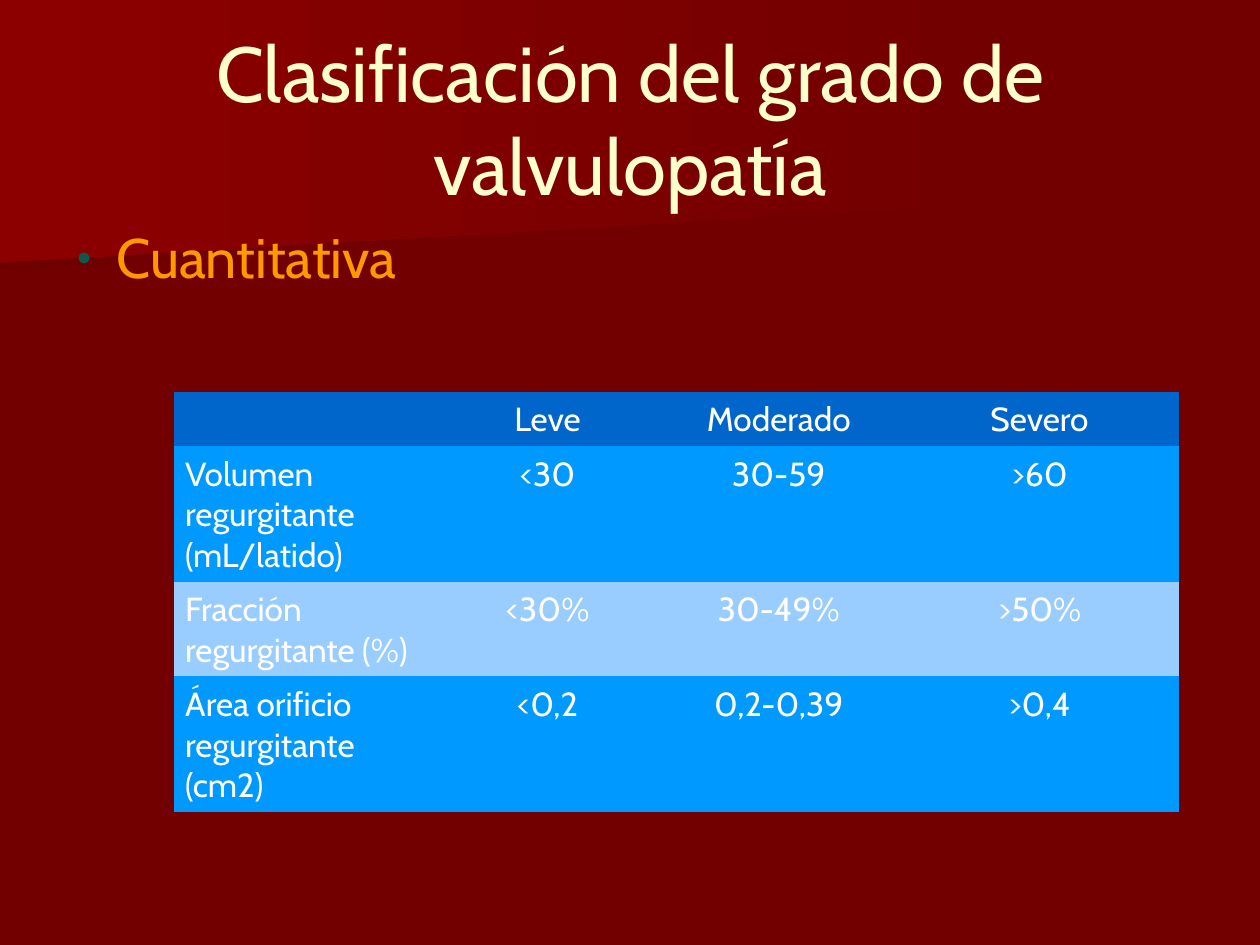
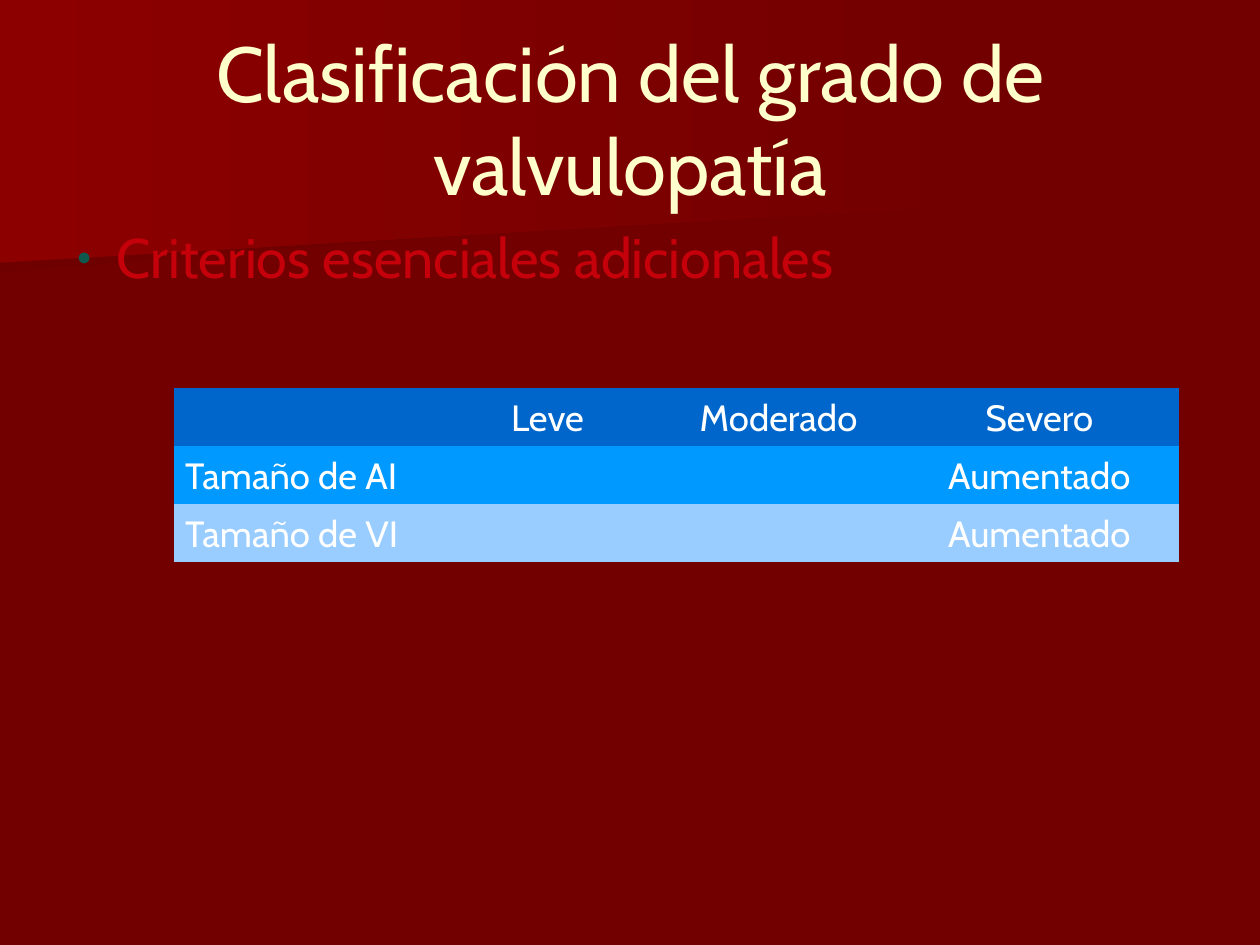
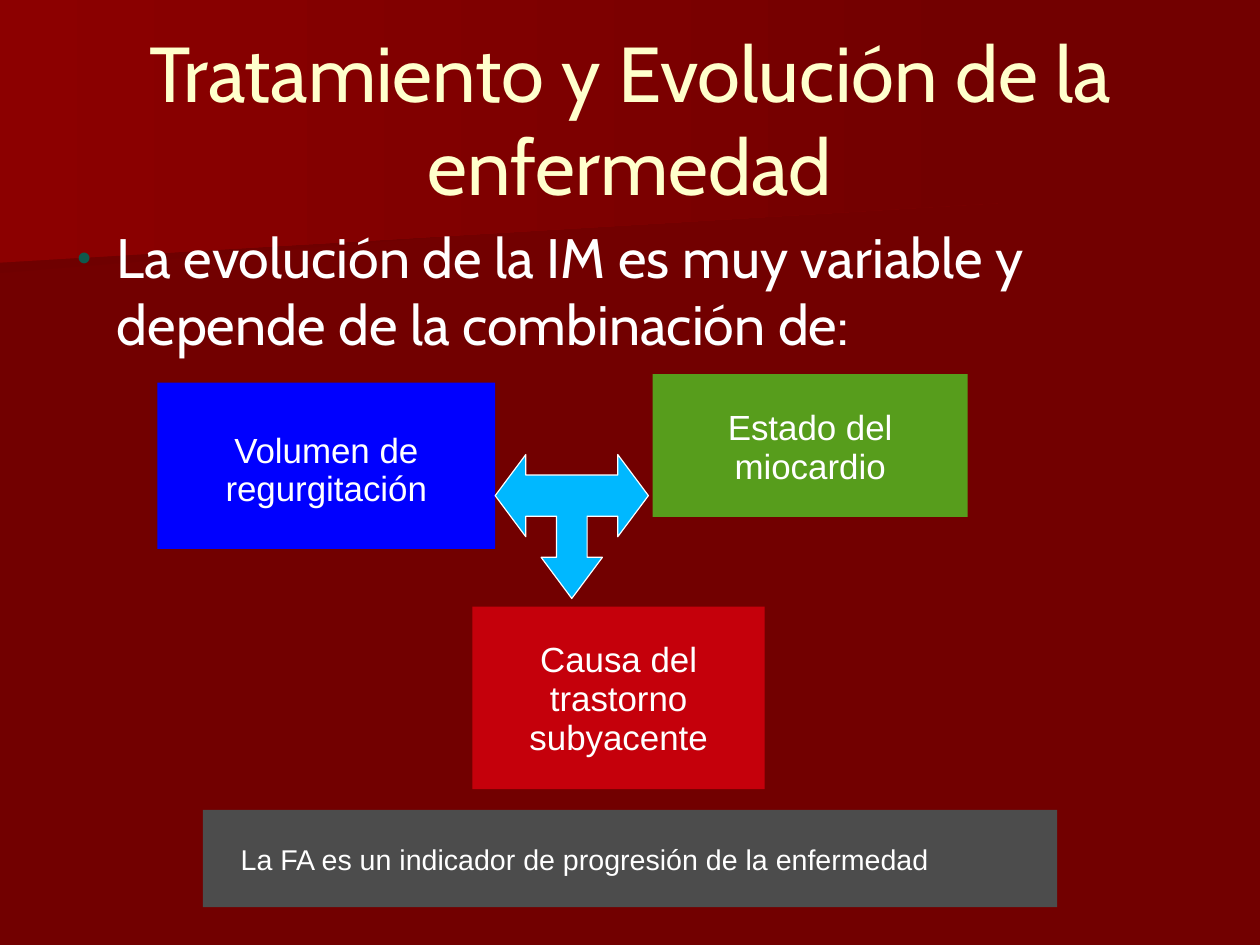
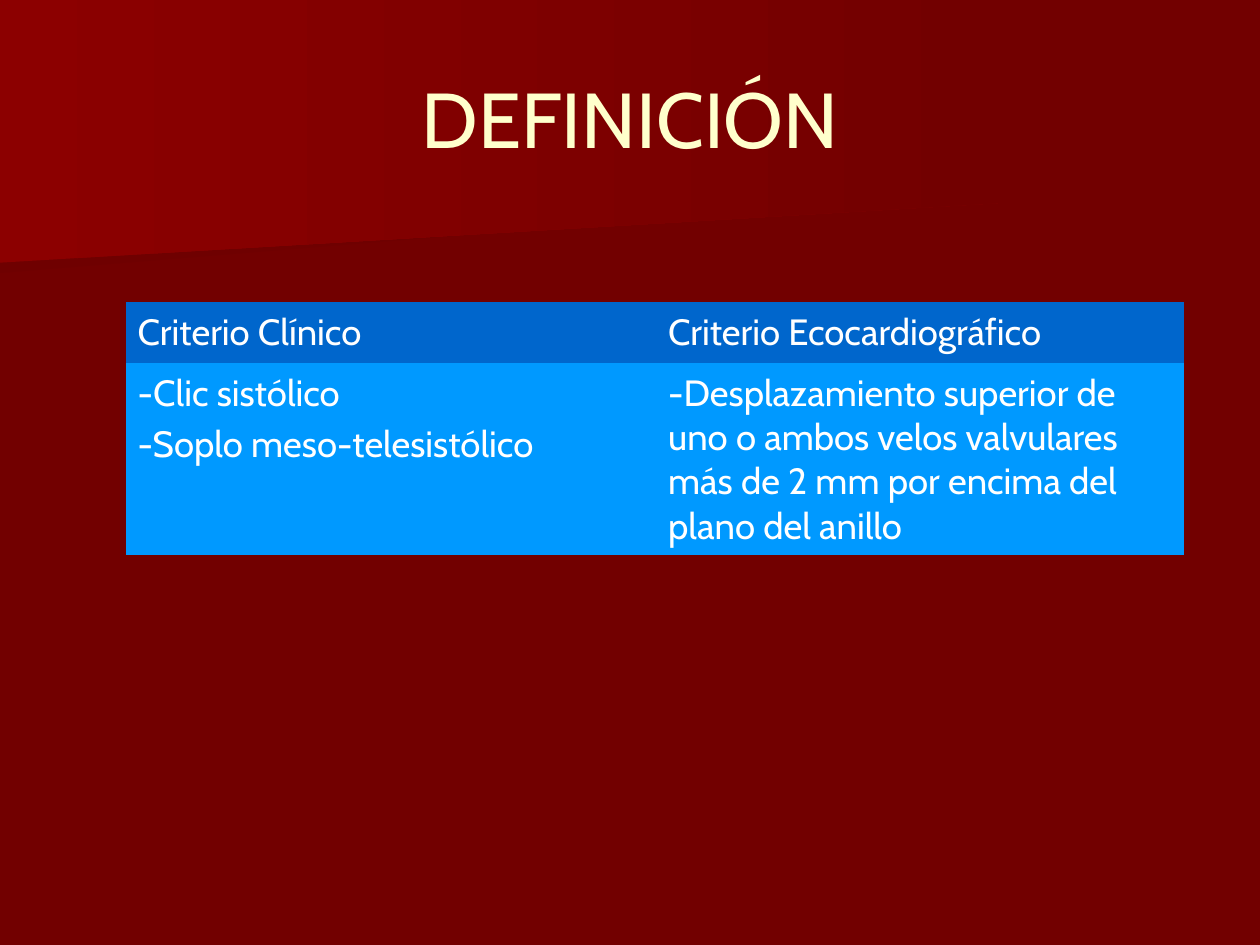
from lxml import etree
from pptx import Presentation
from pptx import util as u
from pptx.dml.color import RGBColor
from pptx.enum import shapes, text
from pptx.oxml.ns import qn

WINE = RGBColor(0x72, 0x00, 0x00)
DARK_WINE = RGBColor(0x6F, 0x00, 0x00)
BRIGHT_WINE = RGBColor(0x8C, 0x00, 0x00)
CREAM = RGBColor(0xFF, 0xFF, 0xCC)
WHITE = RGBColor(0xFF, 0xFF, 0xFF)
ORANGE = RGBColor(0xFF, 0x99, 0x00)
RED = RGBColor(0xC5, 0x00, 0x0B)
BLUE = RGBColor(0x00, 0x00, 0xFF)
GREEN = RGBColor(0x57, 0x9D, 0x1C)
GREY = RGBColor(0x4C, 0x4C, 0x4C)
SKY = RGBColor(0x00, 0xB8, 0xFF)
HEADER = RGBColor(0x00, 0x66, 0xCC)
ROW_FILLS = RGBColor(0x00, 0x99, 0xFF), RGBColor(0x99, 0xCC, 0xFF)
BULLET = RGBColor(0x0E, 0x59, 0x4D)

NO_TABLE_STYLE = "{2D5ABB26-0587-4C30-8999-92F81FD0307C}"
TITLE_AND_BODY, TITLE_ONLY = 1, 5
LEFT, CENTER = text.PP_ALIGN.LEFT, text.PP_ALIGN.CENTER


class Deck:
    """Holds the style and the current slide; lengths are percentages of the slide."""

    def __init__(self):
        self.prs = Presentation()
        self.prs.slide_width = u.Cm(28)
        self.prs.slide_height = u.Cm(21)
        self.slide = None

    def x(self, share):
        return u.Emu(round(self.prs.slide_width * share / 100))

    def y(self, share):
        return u.Emu(round(self.prs.slide_height * share / 100))

    def box(self, left, top, width, height):
        return self.x(left), self.y(top), self.x(width), self.y(height)

    def place(self, shape, *box):
        shape.left, shape.top, shape.width, shape.height = self.box(*box)

    def style(self, paragraph, size, color, font="Cabin", align=LEFT):
        paragraph.alignment = align
        paragraph.font.size = u.Pt(size)
        paragraph.font.name = font
        paragraph.font.color.rgb = color

    def insets(self, frame, left, top, right, bottom):
        frame.margin_left, frame.margin_right = self.x(left), self.x(right)
        frame.margin_top, frame.margin_bottom = self.y(top), self.y(bottom)

    def outline(self, points):
        (start_x, start_y), *rest = [(self.x(px), self.y(py)) for px, py in points]
        builder = self.slide.shapes.build_freeform(start_x, start_y)
        builder.add_line_segments(rest, close=True)
        shape = builder.convert_to_shape()
        shape.shadow.inherit = False
        return shape

    def dress_master(self):
        """Set the background and move the two gradient bands to the master."""
        master = self.prs.slide_master
        master.background.fill.solid()
        master.background.fill.fore_color.rgb = WINE
        bands = (
            (DARK_WINE, [(0, 13.5), (77.9, 13.5), (77.9, 20.4), (0, 28.9)]),
            (BRIGHT_WINE, [(0, 0), (79.2, 0), (79.2, 21.5), (0, 27.8)]),
        )
        for order, (start, points) in enumerate(bands):
            band = self.outline(points)
            band.line.fill.background()
            band.fill.gradient()
            band.fill.gradient_angle = 0
            for stop, color in zip(band.fill.gradient_stops, (start, WINE)):
                stop.color.rgb = color
            band.element.xpath(".//p:cNvPr")[0].set("id", str(100 + order))
            master.shapes.element.insert(2 + order, band.element)

    def new_slide(self, title, layout=TITLE_AND_BODY):
        self.slide = self.prs.slides.add_slide(self.prs.slide_layouts[layout])
        if len(self.prs.slides) == 1:
            self.dress_master()
        heading = self.slide.shapes.title
        self.place(heading, 5, 4, 90, 16.7)
        frame = heading.text_frame
        frame.text = title
        frame.auto_size = text.MSO_AUTO_SIZE.NONE
        frame.vertical_anchor = text.MSO_ANCHOR.MIDDLE
        self.insets(frame, 0, 0.25, 0, 0)
        self.style(frame.paragraphs[0], 49, CREAM, align=CENTER)

    def bullet(self, wording, color, height=65.5):
        body = self.slide.placeholders[1]
        self.place(body, 5, 23.35, 90, height)
        frame = body.text_frame
        frame.text = wording
        frame.auto_size = text.MSO_AUTO_SIZE.NONE
        self.insets(frame, 0, 0.25, 0, 0)
        paragraph = frame.paragraphs[0]
        props = paragraph._p.get_or_add_pPr()
        props.set("marL", str(u.Inches(0.47)))
        props.set("indent", str(u.Inches(-0.35)))
        bullet_color = etree.SubElement(props, qn("a:buClr"))
        etree.SubElement(bullet_color, qn("a:srgbClr"), val=str(BULLET))
        etree.SubElement(props, qn("a:buSzPct"), val="45000")
        etree.SubElement(props, qn("a:buChar"), char="●")
        self.style(paragraph, 35, color)

    def table(self, left, top, widths, heights, rows, size, value_align=CENTER):
        frame = self.slide.shapes.add_table(
            len(rows), len(widths),
            *self.box(left, top, sum(widths), sum(heights)))
        next(frame.element.iter(qn("a:tableStyleId"))).text = NO_TABLE_STYLE
        grid = frame.table
        for column, width in zip(grid.columns, widths):
            column.width = self.x(width)
        for r, (row, height) in enumerate(zip(rows, heights)):
            grid.rows[r].height = self.y(height)
            for c, wording in enumerate(row):
                cell = grid.cell(r, c)
                cell.fill.solid()
                cell.fill.fore_color.rgb = ROW_FILLS[(r - 1) % 2] if r else HEADER
                self.insets(cell, 0.9, 0.85, 0.9, 0.6)
                cell.text = wording
                for i, paragraph in enumerate(cell.text_frame.paragraphs):
                    self.style(paragraph, size, WHITE,
                               align=value_align if c else LEFT)
                    if i:
                        paragraph.space_before = u.Pt(0.2 * size)

    def panel(self, wording, fill, box, size=22, align=CENTER, top_inset=3.7):
        panel = self.slide.shapes.add_shape(
            shapes.MSO_SHAPE.RECTANGLE, *self.box(*box))
        panel.shadow.inherit = False
        panel.fill.solid()
        panel.fill.fore_color.rgb = fill
        panel.line.fill.background()
        frame = panel.text_frame
        frame.text = wording
        frame.word_wrap = True
        frame.vertical_anchor = text.MSO_ANCHOR.TOP
        self.insets(frame, 3, top_inset, 3, 0.6)
        paragraph = frame.paragraphs[0]
        paragraph.line_spacing = 0.93
        self.style(paragraph, size, WHITE, "Arial", align)

    def three_way_arrow(self, left, top, width, height):
        """Arrow pointing left, right and down, mirrored about its middle."""
        half = [(0.5, 1), (0.3, 5 / 7), (0.4, 5 / 7), (0.4, 3 / 7), (0.2, 3 / 7),
                (0.2, 4 / 7), (0, 2 / 7), (0.2, 0), (0.2, 1 / 7)]
        mirrored = [(1 - px, py) for px, py in reversed(half[1:])]
        arrow = self.outline([(left + px * width, top + py * height)
                              for px, py in half + mirrored])
        arrow.fill.solid()
        arrow.fill.fore_color.rgb = SKY
        arrow.line.color.rgb = WHITE
        arrow.line.width = u.Pt(0.75)


def main():
    deck = Deck()
    grading = "Clasificación del grado de valvulopatía"
    grades = ("", "Leve", "Moderado", "Severo")
    grade_widths = (20.9, 17.5, 19.2, 22.2)

    deck.new_slide(grading)
    deck.bullet("Cuantitativa", ORANGE)
    deck.table(13.8, 41.45, grade_widths, (5.7, 14.3, 10, 14.3), (
        grades,
        ("Volumen regurgitante (mL/latido)", "<30", "30-59", ">60"),
        ("Fracción regurgitante (%)", "<30%", "30-49%", ">50%"),
        ("Área orificio regurgitante (cm2)", "<0,2", "0,2-0,39", ">0,4"),
    ), 21)

    deck.new_slide(grading)
    deck.bullet("Criterios esenciales adicionales", RED)
    deck.table(13.8, 41.05, grade_widths, (6.14,) * 3, (
        grades,
        ("Tamaño de AI", "", "", "Aumentado"),
        ("Tamaño de VI", "", "", "Aumentado"),
    ), 23)

    deck.new_slide("Tratamiento y Evolución de la enfermedad")
    deck.bullet("La evolución de la IM es muy variable y depende de la "
                "combinación de:", WHITE, height=9.3)
    deck.panel("Volumen de regurgitación", BLUE, (12.5, 40.5, 26.8, 17.6),
               top_inset=5.2)
    deck.panel("Estado del miocardio", GREEN, (51.8, 39.6, 25, 15.1))
    deck.panel("Causa del trastorno subyacente", RED, (37.5, 64.2, 23.2, 19.3))
    deck.panel("La FA es un indicador de progresión de la enfermedad", GREY,
               (16.1, 85.7, 67.8, 10.3), size=18, align=LEFT)
    deck.three_way_arrow(39.3, 48.1, 12.16, 15.24)

    deck.new_slide("DEFINICIÓN", TITLE_ONLY)
    deck.table(10.03, 31.95, (42.1, 41.85), (6.45, 20.3), (
        ("Criterio Clínico", "Criterio Ecocardiográfico"),
        ("-Clic sistólico\n-Soplo meso-telesistólico",
         "-Desplazamiento superior de uno o ambos velos valvulares más de "
         "2 mm por encima del plano del anillo"),
    ), 23, value_align=LEFT)

    deck.prs.save("out.pptx")


if __name__ == "__main__":
    main()
